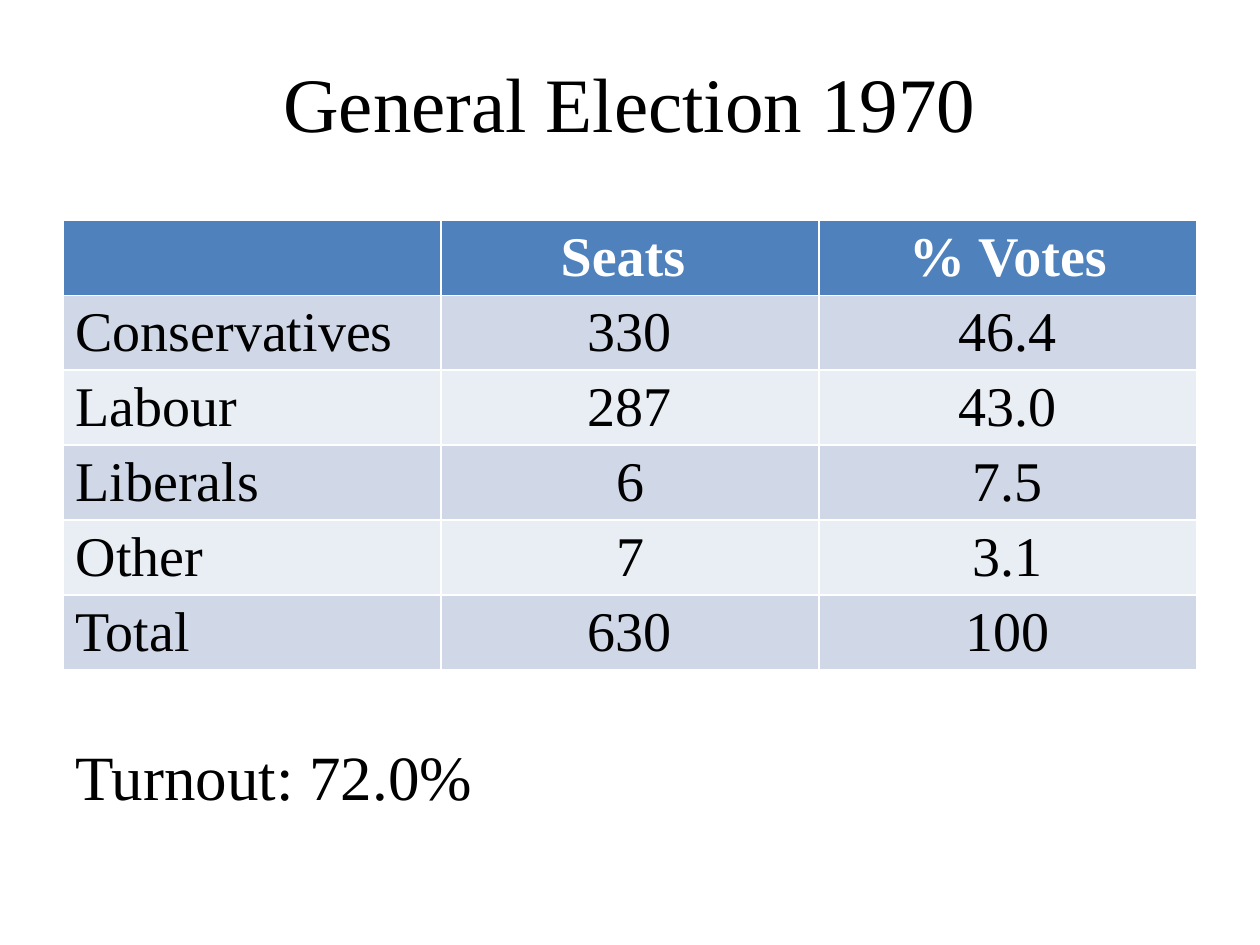
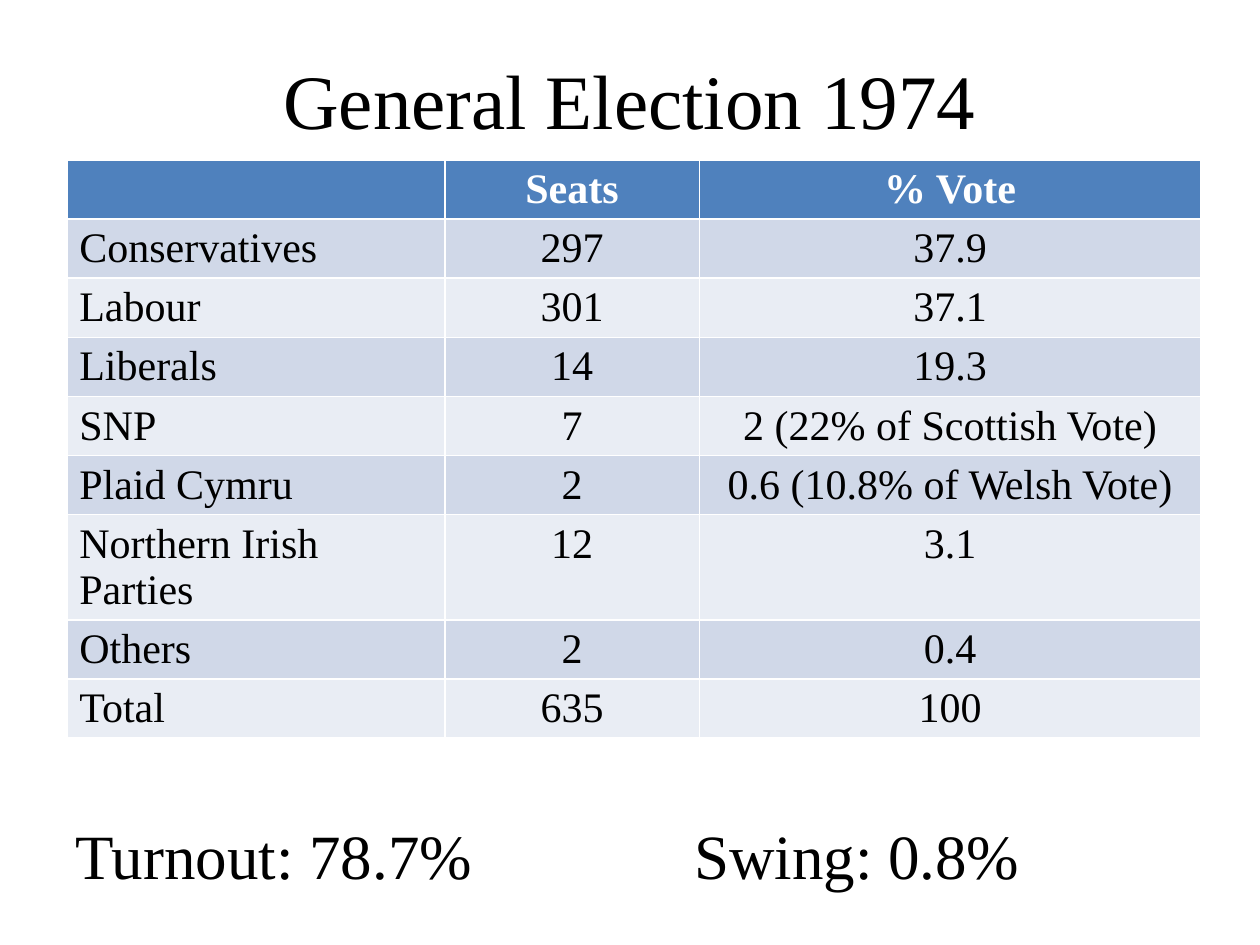
"""Build two slides of general election results."""
from dataclasses import dataclass

from pptx import Presentation
from pptx.dml.color import RGBColor
from pptx.enum import text
from pptx.util import Inches, Pt


@dataclass(frozen=True)
class Theme:
    """Colours, font and type sizes shared by the slides."""
    font: str = "Times New Roman"
    ink: str = "000000"
    paper: str = "FFFFFF"
    header: str = "4F81BD"
    bands: tuple = ("D0D8E8", "E9EDF4")
    title: int = 44
    note: int = 36


THEME = Theme()
LEFT, WIDTH = 0.5, 9
TITLE_ONLY = 5

RESULTS_1970 = [
    ("", "Seats ", "% Votes"),
    ("Conservatives", "330", "46.4"),
    ("Labour", "287", "43.0"),
    ("Liberals", "6", "7.5"),
    ("Other", "7", "3.1"),
    ("Total", "630", "100"),
]
RESULTS_1974 = [
    ("", "Seats", "% Vote"),
    ("Conservatives", "297", "37.9"),
    ("Labour", "301", "37.1"),
    ("Liberals", "14", "19.3"),
    ("SNP", "7", "2 (22% of Scottish Vote)"),
    ("Plaid Cymru", "2", "0.6 (10.8% of Welsh Vote)"),
    ("Northern Irish Parties", "12", "3.1"),
    ("Others", "2", "0.4"),
    ("Total", "635", "100"),
]


def write(tf, content, size, color=THEME.ink, bold=False, centered=False):
    """Fill a text frame with one formatted paragraph."""
    p = tf.paragraphs[0]
    p.alignment = text.PP_ALIGN.CENTER if centered else text.PP_ALIGN.LEFT
    if not content:
        return
    r = p.add_run()
    r.text = content
    r.font.name = THEME.font
    r.font.size = Pt(size)
    r.font.bold = bold
    r.font.color.rgb = RGBColor.from_string(color)


def place_title(s, content, box):
    """Move the title placeholder into the box and fill it."""
    sp = s.shapes.title
    sp.left, sp.top, sp.width, sp.height = map(Inches, box)
    sp.text_frame.vertical_anchor = text.MSO_ANCHOR.MIDDLE
    write(sp.text_frame, content, THEME.title, centered=True)


def add_results(s, rows, left, top, col_widths, row_height, size):
    """Add the table of seats and votes with a header and banded rows."""
    table = s.shapes.add_table(
        len(rows), len(col_widths), Inches(left), Inches(top),
        Inches(sum(col_widths)), Inches(row_height * len(rows))).table
    for column, width in zip(table.columns, col_widths):
        column.width = Inches(width)
    for i, row in enumerate(rows):
        is_header = i == 0
        fill = THEME.header if is_header else THEME.bands[(i - 1) % 2]
        color = THEME.paper if is_header else THEME.ink
        for j, value in enumerate(row):
            cell = table.cell(i, j)
            cell.fill.solid()
            cell.fill.fore_color.rgb = RGBColor.from_string(fill)
            write(cell.text_frame, value, size, color, is_header, j > 0)


def add_note(s, content, left, top, width):
    """Add a line of large text below the table."""
    sp = s.shapes.add_textbox(*map(Inches, (left, top, width, 0.71)))
    sp.text_frame.word_wrap = True
    write(sp.text_frame, content, THEME.note)


def election_slide(prs, year, title_height, table, notes):
    """Add one slide with a title, a results table and notes."""
    s = prs.slides.add_slide(prs.slide_layouts[TITLE_ONLY])
    place_title(s, f"General Election {year}", (LEFT, 0.3, WIDTH, title_height))
    add_results(s, **table)
    for note in notes:
        add_note(s, *note)


def main():
    """Build and save the presentation."""
    prs = Presentation()
    prs.slide_width, prs.slide_height = Inches(10), Inches(7.5)
    election_slide(
        prs, 1970, 1.01,
        dict(rows=RESULTS_1970, left=LEFT, top=1.75, col_widths=(3, 3, 3),
             row_height=0.59, size=32),
        [("Turnout: 72.0%", LEFT, 5.8, 3.39)])
    election_slide(
        prs, 1974, 0.97,
        dict(rows=RESULTS_1974, left=0.53, top=1.27,
             col_widths=(3, 2.02, 3.98), row_height=0.46, size=24),
        [("Turnout: 78.7%", LEFT, 6.43, 5.12),
         ("Swing: 0.8%", 5.41, 6.43, 4.01)])
    prs.save("out.pptx")


if __name__ == "__main__":
    main()
